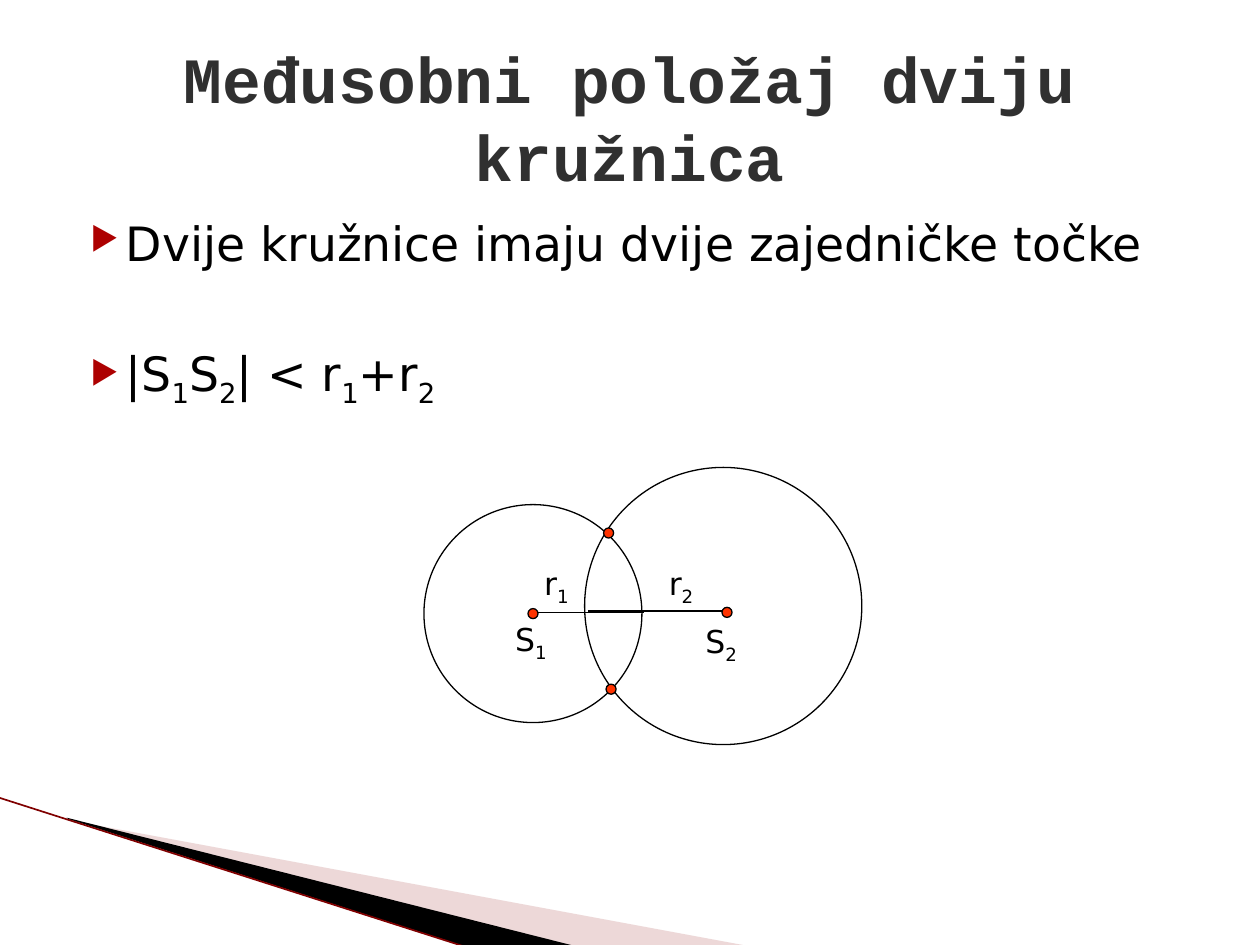
from lxml.etree import SubElement
from pptx import Presentation
from pptx.dml.color import RGBColor
from pptx.enum.shapes import MSO_CONNECTOR, MSO_SHAPE
from pptx.enum.text import MSO_ANCHOR, PP_ALIGN
from pptx.oxml.ns import qn
from pptx.util import Inches, Pt

BLACK = RGBColor(0, 0, 0)
TITLE_GREY = RGBColor(0x30, 0x30, 0x30)
BULLET_RED = RGBColor(0xAD, 0x01, 0x01)
POINT_RED = RGBColor(0xFF, 0x33, 0x00)
WEDGE_PINK = RGBColor(0xD2, 0x9E, 0x9E)
EDGE_RED = RGBColor(0x80, 0, 0)

# Content: "_" marks the next character as a subscript
TITLE = "Međusobni položaj dviju kružnica"
BULLETS = ["Dvije kružnice imaju dvije zajedničke točke",
           "|S_1S_2| < r_1+r_2"]
CIRCLES = [((5.74, 4.81), 2.2), ((4.23, 4.87), 1.73)]  # centre, diameter
POINTS = [(4.23, 4.87), (5.77, 4.86), (4.85, 5.47), (4.83, 4.23)]
POINT_SIZE = 0.08
LABELS = [("S_1", 3.99, 4.87, 0.55), ("S_2", 5.5, 4.89, 0.55),
          ("r_1", 4.22, 4.43, 0.47), ("r_2", 5.21, 4.43, 0.47)]
RADII = [((4.27, 4.86), (5.11, 4.86)), ((4.67, 4.85), (5.74, 4.85))]
WEDGES = [([(0.55, 6.51), (5.95, 7.51), (4.56, 7.51), (0.55, 6.5)], WEDGE_PINK, 40),
          ([(0.53, 6.49), (4.57, 7.51), (3.72, 7.52), (0.54, 6.5)], BLACK, 100)]
EDGE = ((-0.01, 6.33), (3.71, 7.52))

deck = Presentation()
deck.slide_width, deck.slide_height = Inches(10), Inches(7.5)
slide = deck.slides.add_slide(deck.slide_layouts[6])
shapes = slide.shapes


def add_bullet(para):
    props = para._p.get_or_add_pPr()
    props.set("marL", str(Inches(0.4)))
    props.set("indent", str(Inches(-0.28)))
    color = SubElement(props, qn("a:buClr"))
    SubElement(color, qn("a:srgbClr"), val=str(BULLET_RED))
    SubElement(props, qn("a:buSzPct"), val="68000")
    SubElement(props, qn("a:buChar"), char="▶")


def add_text(lines, left, top, width, height, *, size, font="DejaVu Sans",
             color=BLACK, bold=False, align=PP_ALIGN.LEFT,
             anchor=MSO_ANCHOR.TOP, bullets=False, gap=0):
    box = shapes.add_textbox(*map(Inches, (left, top, width, height)))
    frame = box.text_frame
    frame.word_wrap = True
    frame.vertical_anchor = anchor
    for index, line in enumerate(lines):
        para = frame.paragraphs[0] if index == 0 else frame.add_paragraph()
        para.alignment = align
        if index:
            para.space_before = Pt(gap)
        if bullets:
            add_bullet(para)
        first, *rest = line.split("_")
        pieces = [(first, False)]
        for part in rest:
            pieces += [(part[0], True), (part[1:], False)]
        for text, lowered in pieces:
            if not text:
                continue
            span = para.add_run()
            span.text = text
            span.font.size, span.font.name = Pt(size), font
            span.font.bold, span.font.color.rgb = bold, color
            if lowered:
                span.font._element.set("baseline", "-25000")


def add_circle(center, diameter, fill=None):
    left, top = (value - diameter / 2 for value in center)
    circle = shapes.add_shape(MSO_SHAPE.OVAL, *map(Inches, (left, top, diameter, diameter)))
    circle.shadow.inherit = False
    if fill is None:
        circle.fill.background()
    else:
        circle.fill.solid()
        circle.fill.fore_color.rgb = fill
    circle.line.color.rgb = BLACK
    circle.line.width = Pt(0.75)


def add_line(start, end, color=BLACK, width=0.75):
    line = shapes.add_connector(MSO_CONNECTOR.STRAIGHT, *map(Inches, start + end))
    line.line.color.rgb = color
    line.line.width = Pt(width)
    SubElement(line._element.spPr, qn("a:effectLst"))


def add_wedge(corners, color, opacity):
    points = [(Inches(x), Inches(y)) for x, y in corners]
    builder = shapes.build_freeform(*points[0])
    builder.add_line_segments(points[1:], close=True)
    wedge = builder.convert_to_shape()
    wedge.shadow.inherit = False
    wedge.line.fill.background()
    wedge.fill.solid()
    wedge.fill.fore_color.rgb = color
    if opacity < 100:
        tone = wedge._element.spPr.find(".//" + qn("a:srgbClr"))
        SubElement(tone, qn("a:alpha"), val=str(opacity * 1000))


# Corner decoration
for wedge in WEDGES:
    add_wedge(*wedge)
add_line(*EDGE, color=EDGE_RED, width=0.95)

# Title and bullets
add_text(BULLETS, 0.5, 1.65, 9, 4.92, size=27, bullets=True, gap=42)
add_text([TITLE], 0.5, 0.3, 9, 1.25, size=36.9, font="Courier New", bold=True,
         color=TITLE_GREY, align=PP_ALIGN.CENTER, anchor=MSO_ANCHOR.MIDDLE)

# Two intersecting circles
for center, diameter in CIRCLES:
    add_circle(center, diameter)
for radius in RADII:
    add_line(*radius)
for center in POINTS:
    add_circle(center, POINT_SIZE, POINT_RED)
for label, left, top, width in LABELS:
    add_text([label], left, top, width, 0.4, size=18)

deck.save("out.pptx")
